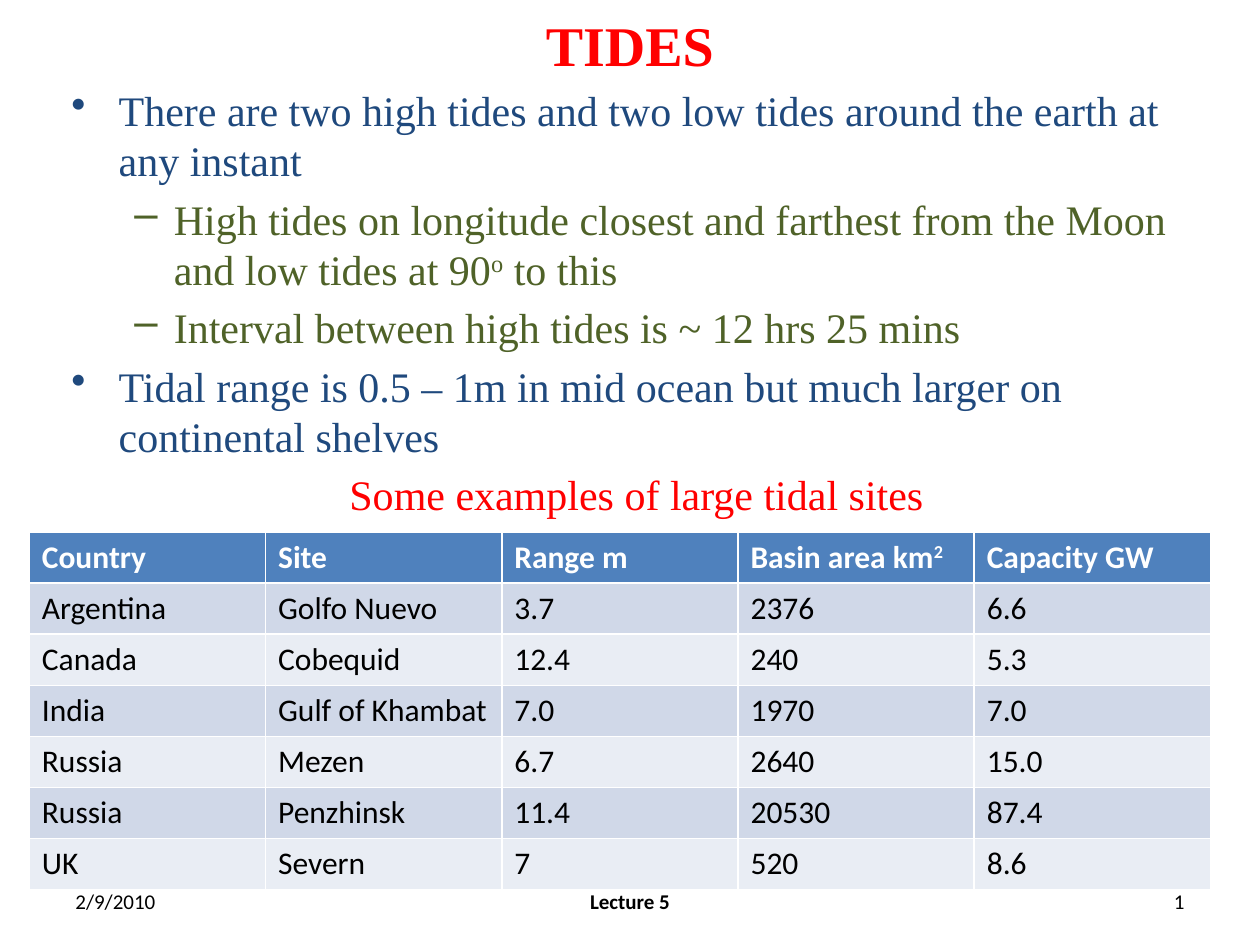
"""Build the slide on tides, with notes on tidal range and a table of large tidal sites."""
import pptx
import pptx.util
import pptx.dml.color
import pptx.enum.text
import pptx.oxml
import pptx.oxml.ns

Pt = pptx.util.Pt
ALIGN = pptx.enum.text.PP_ALIGN
MIDDLE = pptx.enum.text.MSO_ANCHOR.MIDDLE
COLORS = {
    "red": "FF0000", "navy": "1F497D", "olive": "4F6228", "black": "000000",
    "white": "FFFFFF", "header": "4F81BD", "odd": "D0D8E8", "even": "E9EDF4",
}
SERIF, SANS = "Times New Roman", "Calibri"

TITLE = "TIDES"
LEVELS = {
    "main": ("navy", "•", 27, -27, ALIGN.LEFT),
    "sub": ("olive", "–", 58.5, -22.5, ALIGN.LEFT),
    "caption": ("red", None, 12, 0, ALIGN.CENTER),
}
NOTES = [
    ("main", ["There are two high tides and two low tides around the earth at any instant"]),
    ("sub", ["High tides on longitude closest and farthest from the Moon and low tides at 90",
             ("o", 30), " to this"]),
    ("sub", ["Interval between high tides is ~ 12 hrs 25 mins"]),
    ("main", ["Tidal range is 0.5 – 1m in mid ocean but much larger on continental shelves"]),
    ("caption", ["Some examples of large tidal sites"]),
]
SITES = [
    ["Country", "Site", "Range m", ["Basin area km", ("2", 30)], "Capacity GW"],
    ["Argentina", "Golfo Nuevo", "3.7", "2376", "6.6"],
    ["Canada", "Cobequid", "12.4", "240", "5.3"],
    ["India", "Gulf of Khambat", "7.0", "1970", "7.0"],
    ["Russia", "Mezen", "6.7", "2640", "15.0"],
    ["Russia", "Penzhinsk", "11.4", "20530", "87.4"],
    ["UK", "Severn", "7", "520", "8.6"],
]
FOOTER = [
    ("2/9/2010", 36, 168, ALIGN.LEFT, False),
    ("Lecture 5", 246, 228, ALIGN.CENTER, True),
    ("1", 516, 168, ALIGN.RIGHT, False),
]


def rgb(name):
    return pptx.dml.color.RGBColor.from_string(COLORS[name])


def write(para, parts, face, size, color, bold=False, align=ALIGN.LEFT):
    for part in parts:
        text, raised = part if isinstance(part, tuple) else (part, 0)
        span = para.add_run()
        span.text = text
        if raised:
            span.font._element.set("baseline", str(raised * 1000))
    para.alignment = align
    para.font.name, para.font.size, para.font.bold = face, Pt(size), bold
    para.font.color.rgb = rgb(color)


def add_box(page, left, top, width, height):
    box = page.shapes.add_textbox(Pt(left), Pt(top), Pt(width), Pt(height))
    box.text_frame.word_wrap = True
    return box


def add_notes(page):
    box = add_box(page, 33.75, 45, 648, 430)
    box.fill.solid()
    box.fill.fore_color.rgb = rgb("white")
    frame = box.text_frame
    for number, (level, parts) in enumerate(NOTES):
        color, bullet, margin, indent, align = LEVELS[level]
        para = frame.add_paragraph() if number else frame.paragraphs[0]
        write(para, parts, SERIF, 24, color, align=align)
        para.space_before = Pt(4.8)
        para.line_spacing = Pt(28.6)
        props = para._p.get_or_add_pPr()
        props.set("marL", str(Pt(margin)))
        props.set("indent", str(Pt(indent)))
        if bullet:
            mark = pptx.oxml.parse_xml(
                f'<a:buChar {pptx.oxml.ns.nsdecls("a")} char="{bullet}"/>')
            props.find(pptx.oxml.ns.qn("a:defRPr")).addprevious(mark)


def add_sites(page):
    rows, columns = len(SITES), len(SITES[0])
    table = page.shapes.add_table(
        rows, columns, Pt(16.75), Pt(304), Pt(675), Pt(29.2 * rows)).table
    for i, site in enumerate(SITES):
        fill = "header" if i == 0 else "odd" if i % 2 else "even"
        for j, entry in enumerate(site):
            cell = table.cell(i, j)
            cell.fill.solid()
            cell.fill.fore_color.rgb = rgb(fill)
            parts = entry if isinstance(entry, list) else [entry]
            write(cell.text_frame.paragraphs[0], parts, SANS, 18,
                  "black" if i else "white", bold=i == 0)


def main():
    deck = pptx.Presentation()
    deck.slide_width, deck.slide_height = Pt(720), Pt(540)
    page = deck.slides.add_slide(deck.slide_layouts[5])
    title = page.shapes.title
    title.left, title.top, title.width, title.height = Pt(36), Pt(0), Pt(648), Pt(50.4)
    title.text_frame.vertical_anchor = MIDDLE
    write(title.text_frame.paragraphs[0], [TITLE], SERIF, 32, "red", True, ALIGN.CENTER)
    add_notes(page)
    for text, left, width, align, bold in FOOTER:
        frame = add_box(page, left, 500.5, width, 28.75).text_frame
        frame.vertical_anchor = MIDDLE
        write(frame.paragraphs[0], [text], SANS, 12, "black", bold, align)
    add_sites(page)
    deck.save("out.pptx")


if __name__ == "__main__":
    main()
